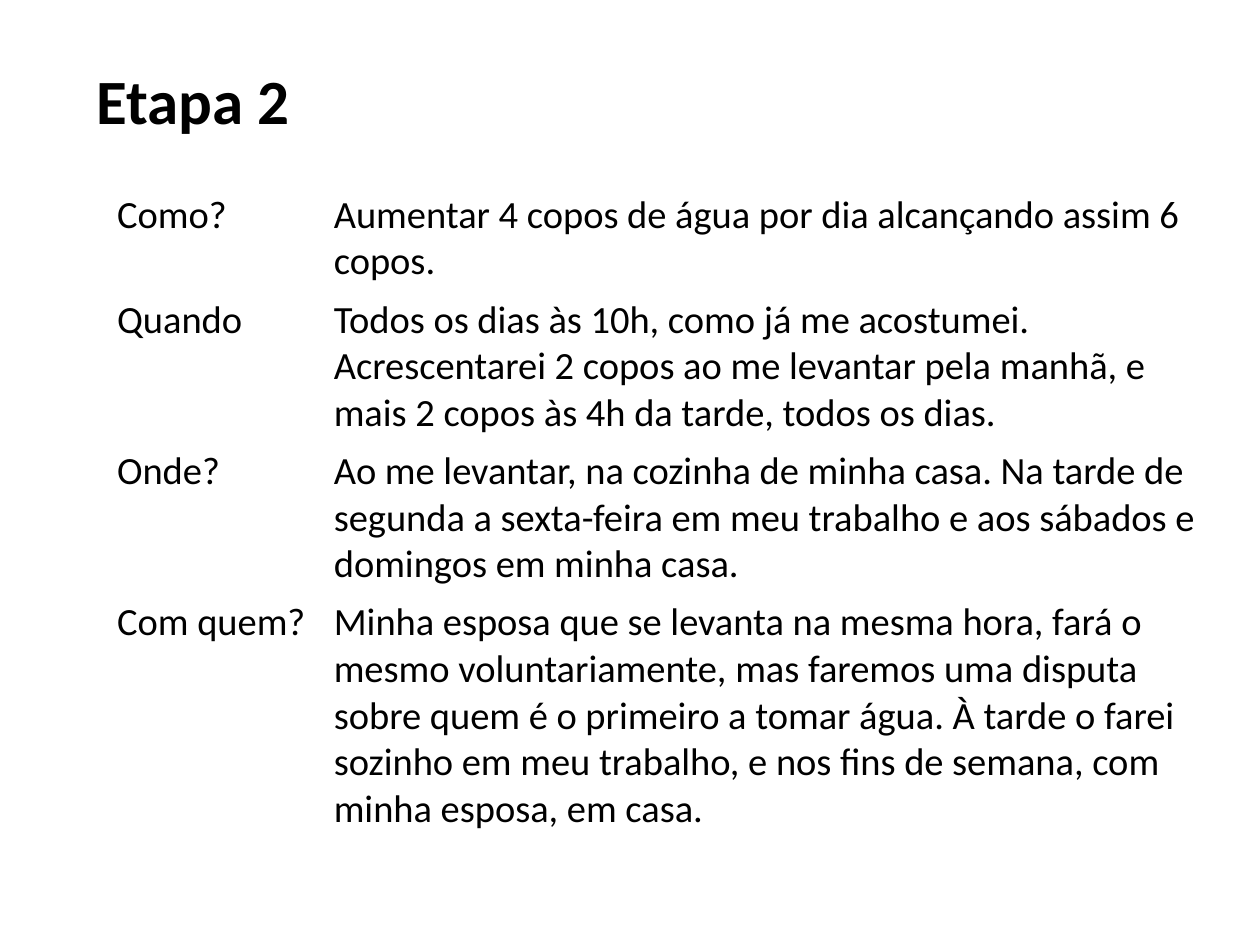
from pptx import Presentation as Deck
from pptx.dml.color import RGBColor as Rgb
from pptx.enum.text import MSO_AUTO_SIZE as Fit
from pptx.util import Inches, Pt

WIDE, HIGH = 10, 7.5

ROWS = [
    (0.71, "Como?", "Aumentar 4 copos de água por dia alcançando assim 6 copos."),
    (1.2, "Quando", "Todos os dias às 10h, como já me acostumei. Acrescentarei "
     "2 copos ao me levantar pela manhã, e mais 2 copos às 4h da tarde, "
     "todos os dias."),
    (1.2, "Onde?", "Ao me levantar, na cozinha de minha casa. Na tarde de "
     "segunda a sexta-feira em meu trabalho e aos sábados e domingos em "
     "minha casa."),
    (1.63, "Com quem?", "Minha esposa que se levanta na mesma hora, fará o "
     "mesmo voluntariamente, mas faremos uma disputa sobre quem é o primeiro "
     "a tomar água. À tarde o farei sozinho em meu trabalho, e nos fins de "
     "semana, com minha esposa, em casa."),
]


def tint(code):
    return Rgb.from_string(code)


class Page:
    """Holds the text style and the current slide."""
    ink = "000000"
    head = {"name": "Calibri", "size": Pt(36), "bold": True}
    body = {"name": "Calibri", "size": Pt(22), "bold": False}

    def __init__(self, deck):
        self.slide = deck.slides.add_slide(deck.slide_layouts[6])
        fill = self.slide.background.fill
        fill.solid()
        fill.fore_color.rgb = tint("FFFFFF")

    def label(self, frame, text, style):
        para = frame.paragraphs[0]
        run = para.add_run()
        run.text = text
        for key, value in style.items():
            setattr(run.font, key, value)
        run.font.color.rgb = tint(self.ink)

    def area(self, x, y, w, h):
        """Turn shares of the slide's size into lengths."""
        return (Inches(x * WIDE), Inches(y * HIGH),
                Inches(w * WIDE), Inches(h * HIGH))

    def title(self, text, *box):
        frame = self.slide.shapes.add_textbox(*self.area(*box)).text_frame
        frame.word_wrap = True
        frame.auto_size = Fit.SHAPE_TO_FIT_TEXT
        self.label(frame, text, self.head)

    def table(self, rows, cols, x, y):
        tall = sum(row[0] for row in rows)
        box = self.area(x, y, sum(cols), tall / HIGH)
        grid = self.slide.shapes.add_table(len(rows), len(cols), *box).table
        grid.first_row = grid.horz_banding = False
        for col, share in zip(grid.columns, cols):
            col.width = Inches(share * WIDE)
        for line, (high, *texts) in zip(grid.rows, rows):
            line.height = Inches(high)
            for cell, text in zip(line.cells, texts):
                cell.fill.background()
                self.label(cell.text_frame, text, self.body)


def main():
    deck = Deck()
    deck.slide_width, deck.slide_height = Inches(WIDE), Inches(HIGH)
    page = Page(deck)

    # Heading
    page.title("Etapa 2", 0.67 / WIDE, 0.44 / HIGH, 3.39 / WIDE, 0.7 / HIGH)

    # Questions and answers
    page.table(ROWS, (1.72 / WIDE, 7.18 / WIDE), 0.83 / WIDE, 1.47 / HIGH)

    deck.save("out.pptx")


if __name__ == "__main__":
    main()
